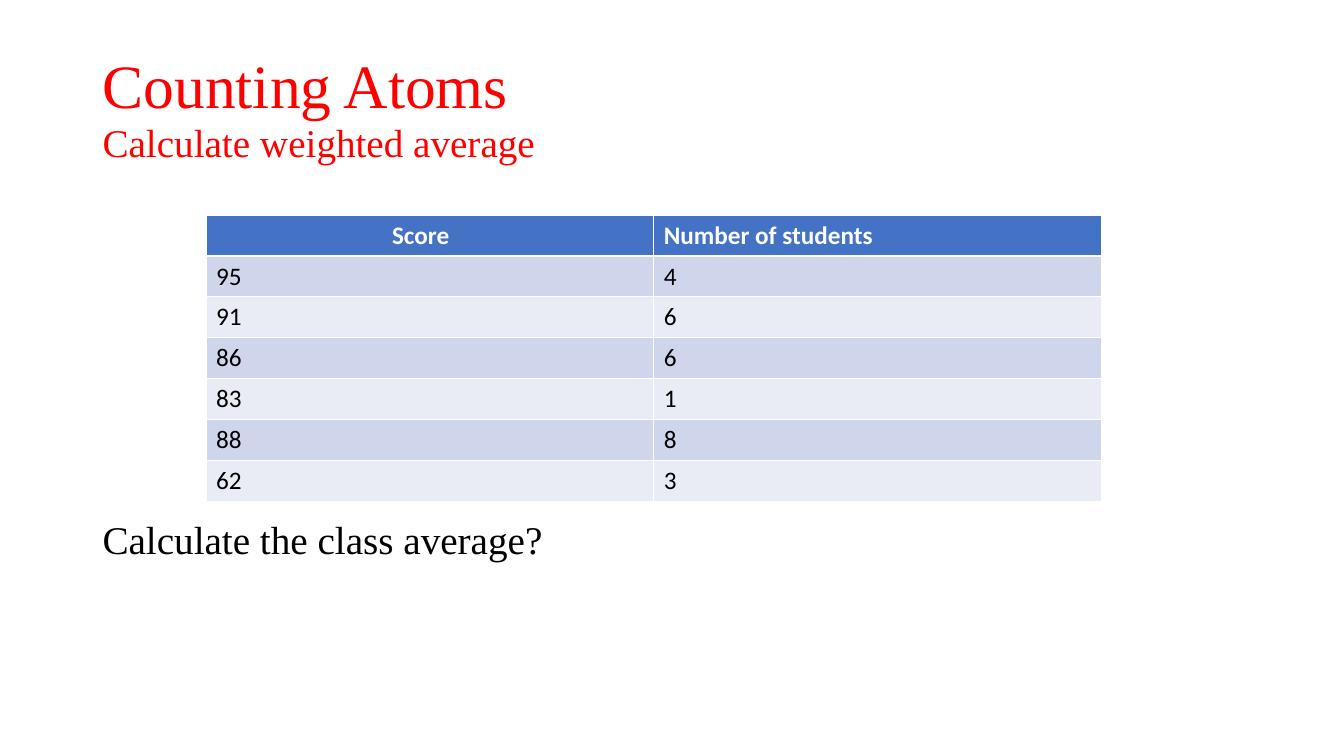
from pptx import Presentation
from pptx import util as u
from pptx.dml.color import RGBColor
from pptx.enum import text
from pptx.oxml.ns import qn
from lxml import etree

RED = RGBColor(0xFF, 0, 0)
BLACK = RGBColor(0, 0, 0)
WHITE = RGBColor(0xFF, 0xFF, 0xFF)
BLUE = RGBColor(0x44, 0x72, 0xC4)
DARK = RGBColor(0xCF, 0xD5, 0xEA)
LIGHT = RGBColor(0xE9, 0xEB, 0xF5)
SERIF = "Times New Roman"
SANS = "Calibri"

HEADS = ("Score", "Number of students")
SCORES = ((95, 4), (91, 6), (86, 6), (83, 1), (88, 8), (62, 3))


def place(shape, box):
    shape.left, shape.top, shape.width, shape.height = (u.Cm(n) for n in box)
    shape.text_frame.word_wrap = True
    shape.text_frame.auto_size = text.MSO_AUTO_SIZE.NONE
    return shape.text_frame


def write(para, words, font, size, color, bold=False):
    run = para.add_run()
    run.text = words
    run.font.name = font
    run.font.size = u.Pt(size)
    run.font.bold = bold
    run.font.color.rgb = color
    para.alignment = text.PP_ALIGN.LEFT


def add_title(slide, box):
    frame = place(slide.shapes.title, box)
    frame.vertical_anchor = text.MSO_ANCHOR.MIDDLE
    para = frame.paragraphs[0]
    para.line_spacing = 0.9
    write(para, "Counting Atoms", SERIF, 44, RED)


def add_body(slide, box):
    frame = place(slide.placeholders[1], box)
    lines = (("Calculate weighted average", RED, 10),
             ("Calculate the class average?", BLACK, 253))
    for i, (words, color, gap) in enumerate(lines):
        para = frame.add_paragraph() if i else frame.paragraphs[0]
        para.line_spacing = 0.9
        para.space_before = u.Pt(gap)
        write(para, words, SERIF, 28, color)
        props = para._p.get_or_add_pPr()
        props.set("marL", "0")
        props.set("indent", "0")
        etree.SubElement(props, qn("a:buNone"))


def add_scores(slide, box):
    rows = (HEADS,) + SCORES
    frame = slide.shapes.add_table(len(rows), len(HEADS), *(u.Cm(n) for n in box))
    table = frame.table
    for r, row in enumerate(rows):
        fill = BLUE if r == 0 else DARK if r % 2 else LIGHT
        color = BLACK if r else WHITE
        for c, value in enumerate(row):
            cell = table.cell(r, c)
            cell.fill.solid()
            cell.fill.fore_color.rgb = fill
            write(cell.text_frame.paragraphs[0], str(value), SANS, 18, color, r == 0)
    table.cell(0, 0).margin_left = u.Cm(4.69)


def main():
    deck = Presentation()
    deck.slide_width = u.Cm(33.87)
    deck.slide_height = u.Cm(19.05)
    slide = deck.slides.add_slide(deck.slide_layouts[1])
    add_title(slide, (2.33, 1.02, 29.21, 2.41))
    add_body(slide, (2.33, 3, 29.21, 14.15))
    add_scores(slide, (5.19, 5.42, 22.57, 7.21))
    deck.save("out.pptx")


if __name__ == "__main__":
    main()
